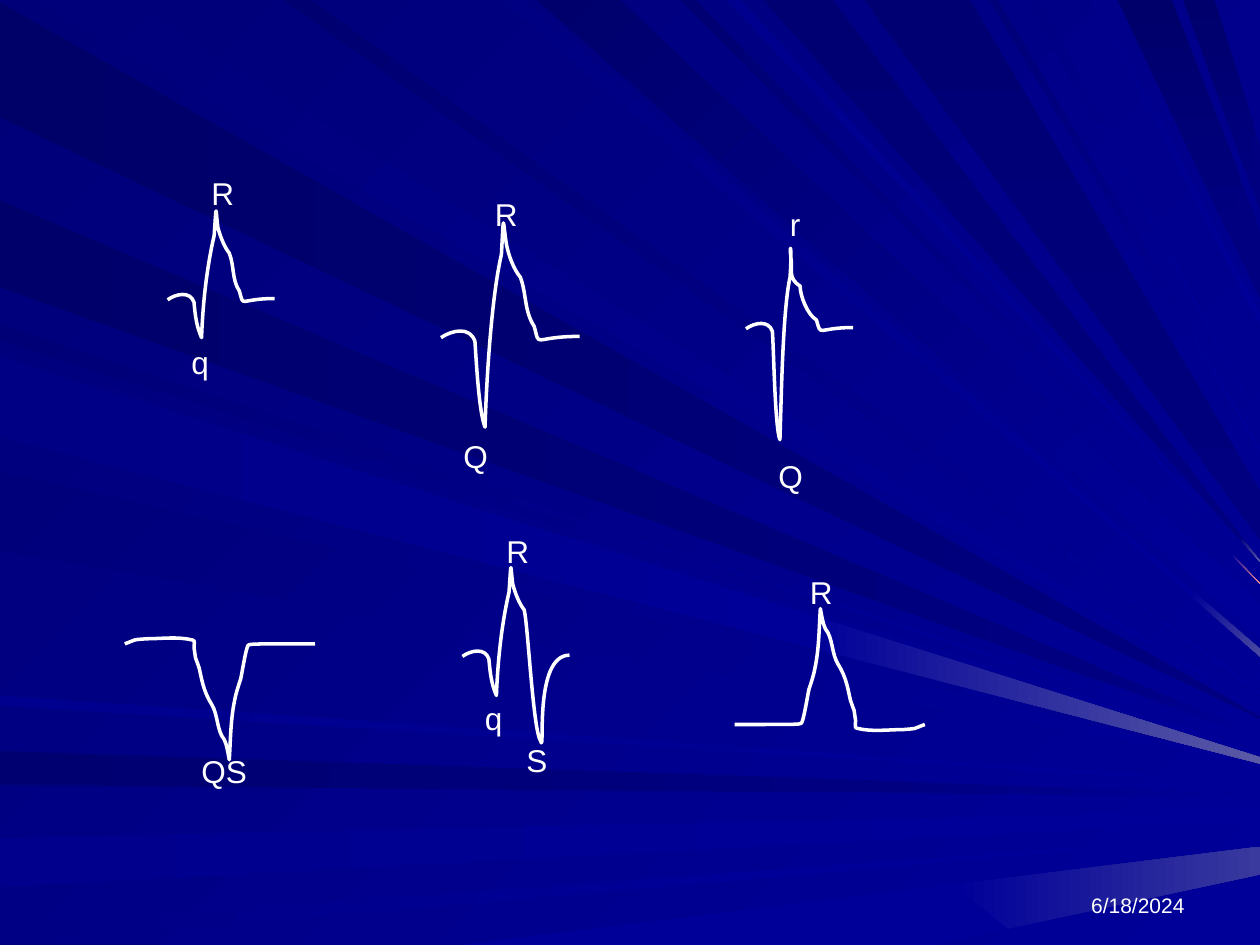
from lxml import etree
from pptx import Presentation
from pptx.dml.color import RGBColor
from pptx.enum.text import MSO_ANCHOR, MSO_AUTO_SIZE, PP_ALIGN
from pptx.oxml.ns import qn
from pptx.util import Inches, Pt

RIGHT, BOTTOM = PP_ALIGN.RIGHT, MSO_ANCHOR.BOTTOM
FIT_SHAPE = MSO_AUTO_SIZE.SHAPE_TO_FIT_TEXT

# The slide is a grid of 1000 columns by 750 rows
COLUMNS, ROWS = 1000, 750
CELL = Inches(0.01)

WHITE = RGBColor(0xFF, 0xFF, 0xFF)
PINK = RGBColor(0xFF, 0x99, 0x99)
HAZE_LOW = RGBColor(0x39, 0x39, 0x9E)
HAZE_MID = RGBColor(0x4A, 0x4A, 0xA1)
HAZE_HIGH = RGBColor(0x5A, 0x5A, 0xA6)
NAVY = RGBColor(0, 0, 0x80)
ROYAL = RGBColor(0, 0, 0x99)
# Darker starting shades, by blue level
BLUE = {level: RGBColor(0, 0, level) for level in range(0x69, 0x8F)}

# Rays run to the right edge: two starts on an edge, two end rows, start shade,
# end colour, gradient angle, and where needed a split share and a far colour
LEFT_RAYS = [
    (2, 93, 569, 570, 0x69, NAVY, 0),
    (596, 623, 631, 632, 0x71, NAVY, 0, 0.7, ROYAL),
    (665, 704, 643, 651, 0x8C, ROYAL, 0, 0.83, ROYAL),
    (735, 750, 662, 662, 0x85, ROYAL, 0, 0.63, ROYAL),
    (258, 270, 589, 589, 0x76, ROYAL, 45, 0.87, ROYAL),
    (159, 228, 584, 585, 0x6B, NAVY, 0, 0.87, ROYAL),
    (278, 342, 596, 602, 0x7E, ROYAL, 45),
    (374, 437, 605, 606, 0x7B, ROYAL, 45),
    (552, 560, 621, 623, 0x8E, ROYAL, 0),
    (283, 347, 601, 606, 0x85, ROYAL, 0, 0.64, HAZE_HIGH),
]
TOP_RAYS = [
    (26, 101, 563, 562, 0x7B, ROYAL, 45),
    (398, 416, 521, 515, 0x83, ROYAL, 45, 0.91, HAZE_MID),
    (426, 492, 507, 479, 0x6D, ROYAL, 45, 0.92, ROYAL),
    (540, 552, 463, 463, 0x73, ROYAL, 45, 0.95, PINK),
    (606, 661, 446, 445, 0x73, NAVY, 90, 0.96, HAZE_HIGH),
    (887, 930, 237, 183, 0x6B, NAVY, 90, 0.78, NAVY),
    (939, 964, 167, 114, 0x6D, NAVY, 90, 0.9, NAVY),
    (225, 247, 552, 547, 0x70, ROYAL, 45),
    (577, 588, 454, 453, 0x8E, ROYAL, 45),
    (686, 770, 428, 390, 0x73, NAVY, 90),
    (785, 792, 360, 354, 0x78, ROYAL, 45),
    (815, 824, 336, 335, 0x85, ROYAL, 45),
    (865, 872, 258, 249, 0x8A, ROYAL, 45),
]

# Parts of a wave with a q: the R peak, then the fall to the baseline
TALL_PEAK = [(31, -25), (37, -51), (39, -80), (38, -72), (40, -57),
             (42, -50), (45, -42), (49, -37)]
SMALL_PEAK = [(29, -14), (35, -41), (37, -69), (34, -69), (36, -54),
              (37, -48), (33, -40), (43, -34)]
PLAIN_FALL = [(53, -27), (51, -16), (57, -7), (61, 7)]
SMALL_FALL = [(43, -26), (49, -11), (56, -7), (60, 7)]
S_FALL = [(52, -26), (56, 58), (62, 67), (66, 81)]


def q_wave(column, row, q_depth, peak=TALL_PEAK, fall=PLAIN_FALL, scale=1):
    """Bezier points of a wave that starts with a q of the given depth."""
    onset = [(0, 0), (7, -5), (18, -7), (21, 2)]
    q_part = [(22, 13), (23, q_depth - 9), (27, q_depth), (28, q_depth - 27)]
    points = onset + q_part + peak + fall + [(56, -1), (85, -1)]
    return [(column + x * scale, row + y * scale) for x, y in points]


QS_WAVE = [
    (99, 511), (110, 507), (104, 508), (116, 507), (128, 507), (141, 505), (153, 508),
    (155, 508), (154, 512), (154, 514), (156, 527), (154, 518), (158, 530),
    (160, 538), (161, 548), (168, 559), (173, 567), (172, 580), (178, 587),
    (180, 591), (181, 598), (182, 603), (183, 587), (183, 572), (186, 557),
    (187, 551), (189, 545), (191, 539), (192, 535), (195, 515), (197, 512),
    (199, 511), (201, 511), (250, 511)]
# The R wave is the QS wave, moved and turned upside down
R_WAVE = [(x + 484, y - 22) for x, y in QS_WAVE]

# Each wave with its rotation and its labels (text, column, row)
COMPLEXES = [
    (q_wave(133, 238, 30), 0, [("q", 142, 267), ("R", 158, 133)]),
    (q_wave(350, 268, 55, scale=1.29), 0, [("Q", 358, 342), ("R", 383, 150)]),
    (q_wave(592, 261, 88, SMALL_PEAK, SMALL_FALL), 0, [("Q", 608, 358), ("r", 617, 158)]),
    (QS_WAVE, 0, [("QS", 150, 592)]),
    (q_wave(367, 521, 31, fall=S_FALL), 0,
     [("q", 375, 550), ("R", 392, 417), ("S", 408, 583)]),
    (R_WAVE, 180, [("R", 633, 450)]),
]
LABEL_HEIGHT = 40
LABEL_WIDTHS = {"q": 34, "R": 38, "Q": 40, "r": 28, "QS": 56, "S": 37}


def between(start, end, share):
    return tuple(a + (b - a) * share for a, b in zip(start, end))


class SlideBuilder:
    """Holds the style and the slide being drawn."""

    def __init__(self, slide):
        self.slide = slide
        self.font_name = "Arial"
        self.line_width = Pt(2)

    def gradient(self, fill, start, end, angle):
        fill.gradient()
        fill.gradient_angle = (360 - angle) % 360
        for stop, color in zip(fill.gradient_stops, (start, end)):
            stop.color.rgb = color

    def outline(self, points, close):
        builder = self.slide.shapes.build_freeform(*points[0], scale=CELL)
        builder.add_line_segments(points[1:], close=close)
        shape = builder.convert_to_shape()
        shape.shadow.inherit = False
        return shape

    def band(self, corners, start, end, angle):
        shape = self.outline(corners, close=True)
        shape.line.fill.background()
        if start == end:
            shape.fill.solid()
            shape.fill.fore_color.rgb = start
        else:
            self.gradient(shape.fill, start, end, angle)

    def ray(self, starts, end_rows, shade, color, angle, split=1, far_color=None):
        ends = [(COLUMNS, row) for row in end_rows]
        middles = [between(*pair, split) for pair in zip(starts, ends)]
        self.band([*starts, *reversed(middles)], BLUE[shade], color, angle)
        if far_color is not None:
            self.band([*middles, *reversed(ends)], color, far_color, angle)

    def wave(self, points, rotation):
        shape = self.outline(points, close=False)
        shape.fill.background()
        shape.line.color.rgb = WHITE
        shape.line.width = self.line_width
        shape.rotation = rotation
        # Every three line segments become one Bezier curve
        outline = next(shape.element.iter(qn("a:path")))
        segments = outline.findall(qn("a:lnTo"))
        for first in range(0, len(segments), 3):
            curve = etree.SubElement(outline, qn("a:cubicBezTo"))
            for segment in segments[first:first + 3]:
                curve.append(segment[0])
                outline.remove(segment)

    def text(self, text, column, row, width, height, size, frame_format, alignment=None):
        box = self.slide.shapes.add_textbox(*(CELL * n for n in (column, row, width, height)))
        for name, value in frame_format.items():
            setattr(box.text_frame, name, value)
        paragraph = box.text_frame.paragraphs[0]
        paragraph.alignment = alignment
        run = paragraph.add_run()
        run.text = text
        for name, value in {"name": self.font_name, "size": Pt(size)}.items():
            setattr(run.font, name, value)
        run.font.color.rgb = WHITE


def main():
    presentation = Presentation()
    presentation.slide_width = CELL * COLUMNS
    presentation.slide_height = CELL * ROWS
    slide = presentation.slides.add_slide(presentation.slide_layouts[6])
    builder = SlideBuilder(slide)

    # Background
    builder.gradient(slide.background.fill, BLUE[0x78], ROYAL, 45)
    for first, second, *rest in LEFT_RAYS:
        builder.ray([(0, first), (0, second)], rest[:2], *rest[2:])
    for first, second, *rest in TOP_RAYS:
        builder.ray([(first, 0), (second, 0)], rest[:2], *rest[2:])
    builder.band([(364, ROWS), (742, ROWS), (COLUMNS, 694), (COLUMNS, 672)], ROYAL, ROYAL, 0)
    builder.band([(756, 702), (800, 737), (COLUMNS, 694), (COLUMNS, 672)], ROYAL, HAZE_LOW, 0)

    # Date
    builder.text("6/18/2024", 717, 683, 233, 50, 12,
                 {"word_wrap": True, "vertical_anchor": BOTTOM}, RIGHT)

    # Waves and their labels
    for points, rotation, labels in COMPLEXES:
        builder.wave(points, rotation)
        for label, column, row in labels:
            builder.text(label, column, row, LABEL_WIDTHS[label], LABEL_HEIGHT, 18,
                         {"word_wrap": False, "auto_size": FIT_SHAPE})

    presentation.save("out.pptx")


if __name__ == "__main__":
    main()
